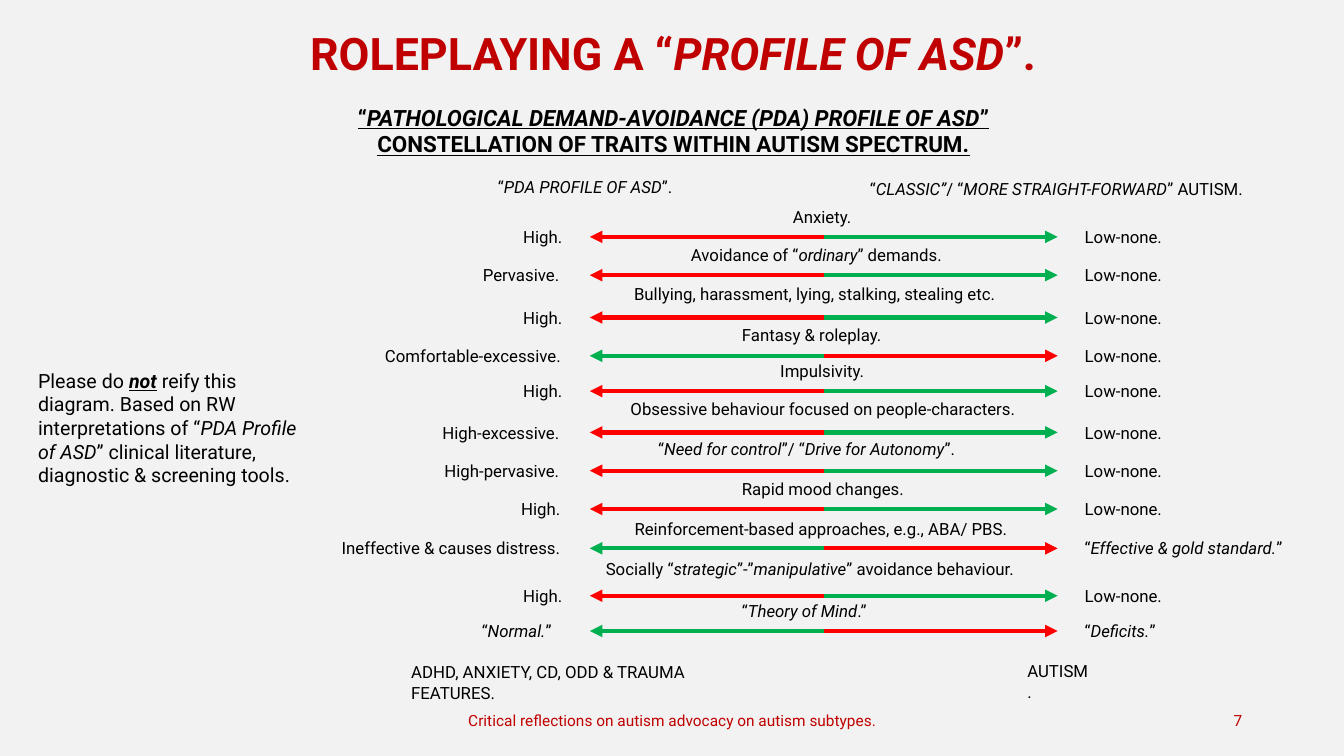
from pptx import Presentation
from pptx.dml.color import RGBColor
from pptx.enum.shapes import MSO_CONNECTOR as Connector
from pptx.enum.text import MSO_ANCHOR as Anchor, MSO_AUTO_SIZE as AutoSize, PP_ALIGN as Align
from pptx.oxml.ns import qn
from pptx.util import Inches, Pt
from lxml.etree import SubElement

BLACK, CRIMSON, RED, GREEN = "000000", "C00000", "FF0000", "00B050"
CENTRE, HALF_AXIS = 8.17, 2.32
LEFT_EDGE, RIGHT_EDGE = 5.69, 10.66
LINE_HEIGHT, LABEL_RISE = 0.3, 0.15
LOW = ("Low-none.", 1)

# Topic, its width and top; axis height; left pole and width; right pole and width; left colour
TRAITS = [
    ("Anxiety.", 0.81, 2.0, 2.35, ("High.", 0.6), LOW, RED),
    ("Avoidance of “*ordinary*” demands.", 2.83, 2.38, 2.73, ("Pervasive.", 1), LOW, RED),
    ("Bullying, harassment, lying, stalking, stealing etc.", 3.96, 2.77, 3.15,
     ("High.", 0.6), LOW, RED),
    ("Fantasy & roleplay.", 1.82, 3.17, 3.53, ("Comfortable-excessive.", 1.97), LOW, GREEN),
    ("Impulsivity.", 1.06, 3.53, 3.88, ("High.", 0.6), LOW, RED),
    ("Obsessive behaviour focused on people-characters.", 4.03, 3.91, 4.29,
     ("High-excessive.", 1.4), LOW, RED),
    ("“*Need for control*”/ “*Drive for Autonomy*”.", 3.48, 4.3, 4.67,
     ("High-pervasive.", 1.38), LOW, RED),
    ("Rapid mood changes.", 1.82, 4.7, 5.05, ("High.", 0.62), LOW, RED),
    ("Reinforcement-based approaches, e.g., ABA/ PBS.", 3.95, 5.1, 5.44,
     ("Ineffective & causes distress.", 2.4), ("“*Effective & gold standard.*”", 2.39), GREEN),
    ("Socially “*strategic*”-”*manipulative*” avoidance behaviour.", 4.52, 5.49, 5.91,
     ("High.", 0.6), LOW, RED),
    ("“*Theory of Mind*.”", 1.82, 5.91, 6.26,
     ("“*Normal.*”", 1.01), ("“*Deficits.*”", 1.02), GREEN),
]


def rgb(colour):
    return RGBColor.from_string(colour)


class SlideBuilder:
    font_name = "Roboto"

    def __init__(self, slide, background):
        self.slide = slide
        slide.background.fill.solid()
        slide.background.fill.fore_color.rgb = rgb(background)

    def fill_frame(self, frame, wording, size, colour, align, bold=False, underline=False):
        """Fill a frame; stretches between asterisks become italic."""
        frame.word_wrap = True
        paragraph = frame.paragraphs[0]
        paragraph.alignment = align
        paragraph.space_before = Pt(0)
        for index, part in enumerate(wording.split("*")):
            if not part:
                continue
            run = paragraph.add_run()
            run.text = part
            font = run.font
            font.name, font.size = self.font_name, Pt(size)
            font.color.rgb = rgb(colour)
            font.bold, font.underline = bold, underline
            font.italic = index % 2 == 1
        return paragraph

    def title(self, wording, left, top, width, height):
        heading = self.slide.shapes.title
        heading.left, heading.top = Inches(left), Inches(top)
        heading.width, heading.height = Inches(width), Inches(height)
        frame = heading.text_frame
        frame.vertical_anchor = Anchor.TOP
        frame.auto_size = AutoSize.SHAPE_TO_FIT_TEXT
        self.fill_frame(frame, wording, 32, CRIMSON, Align.CENTER, bold=True)

    def text(self, wording, left, top, width, height=LINE_HEIGHT, size=12, colour=BLACK,
             align=Align.LEFT, anchor=Anchor.TOP, **emphasis):
        box = self.slide.shapes.add_textbox(
            Inches(left), Inches(top), Inches(width), Inches(height))
        box.text_frame.vertical_anchor = anchor
        return self.fill_frame(box.text_frame, wording, size, colour, align, **emphasis)

    def arrow(self, start, end, height, colour):
        connector = self.slide.shapes.add_connector(
            Connector.STRAIGHT, Inches(start), Inches(height), Inches(end), Inches(height))
        connector.line.color.rgb = rgb(colour)
        connector.line.width = Pt(3)
        properties = connector.element.spPr
        SubElement(properties.find(qn("a:ln")), qn("a:tailEnd"), type="triangle")
        SubElement(properties, qn("a:effectLst"))

    def trait(self, topic, width, top, axis, left_pole, right_pole, left_colour):
        """Draw one topic above its two-way arrow, with a label at each pole."""
        right_colour = GREEN if left_colour == RED else RED
        self.text(topic, CENTRE - width / 2, top, width)
        self.arrow(CENTRE, CENTRE + HALF_AXIS, axis, right_colour)
        self.arrow(CENTRE, CENTRE - HALF_AXIS, axis, left_colour)
        left_wording, left_width = left_pole
        right_wording, right_width = right_pole
        self.text(left_wording, LEFT_EDGE - left_width, axis - LABEL_RISE, left_width)
        self.text(right_wording, RIGHT_EDGE, axis - LABEL_RISE, right_width)


def main():
    deck = Presentation()
    deck.slide_width, deck.slide_height = Inches(13.33), Inches(7.5)
    title_only = deck.slide_layouts[5]
    page = SlideBuilder(deck.slides.add_slide(title_only), "F2F2F2")

    page.title("ROLEPLAYING A “*PROFILE OF ASD*”.", 0.69, 0.2, 11.97, 0.64)
    page.text("“*PATHOLOGICAL DEMAND-AVOIDANCE (PDA) PROFILE OF ASD*” "
              "CONSTELLATION OF TRAITS WITHIN AUTISM SPECTRUM.",
              3.36, 0.98, 6.64, 0.64, size=16, align=Align.CENTER, bold=True, underline=True)
    caution = page.text("Please do *not* reify this diagram. Based on RW interpretations of "
                        "“*PDA Profile of ASD*” clinical literature, diagnostic & screening tools.",
                        0.28, 3.61, 2.93, 1.28, size=14)
    stressed_not = caution.runs[1].font
    stressed_not.bold = stressed_not.underline = True

    page.text("“*PDA PROFILE OF ASD*”.", 4.84, 1.7, 2.01)
    page.text("“*CLASSIC”*/ “*MORE STRAIGHT-FORWARD*” AUTISM.", 8.53, 1.72, 3.94)
    for trait in TRAITS:
        page.trait(*trait)
    page.text("ADHD, ANXIETY, CD, ODD & TRAUMA FEATURES.", 3.98, 6.52, 3.74)
    page.text("AUTISM.", 10.09, 6.51, 0.82)

    footer = {"size": 11, "colour": CRIMSON, "anchor": Anchor.MIDDLE}
    page.text("Critical reflections on autism advocacy on autism subtypes.",
              4.42, 6.95, 4.5, 0.4, align=Align.CENTER, **footer)
    page.text("7", 9.42, 6.95, 3, 0.4, align=Align.RIGHT, **footer)
    deck.save("out.pptx")


if __name__ == "__main__":
    main()
